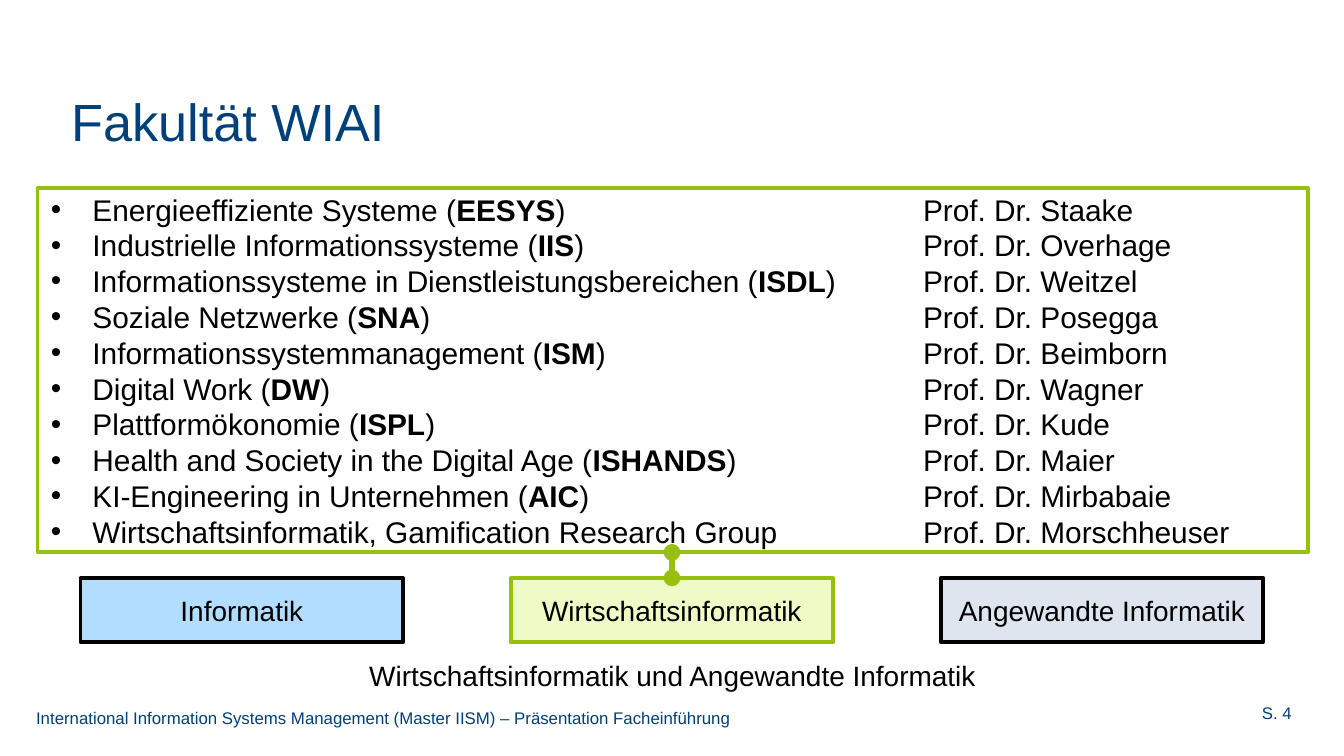
from pptx import Presentation
from pptx.dml.color import RGBColor
from pptx.enum.shapes import MSO_CONNECTOR, MSO_SHAPE
from pptx.enum.text import MSO_ANCHOR, PP_ALIGN
from pptx.oxml.ns import qn
from pptx.util import Inches, Pt
from lxml.etree import SubElement

NAVY, GREEN, BLACK = "00407A", "97BF0D", "000000"
MARGIN, WIDTH = 0.28, 9.45              # content column
BOX_W, BOX_H, BOX_TOP, PITCH = 2.4, 0.48, 4.3, 3.2
LIST_TOP, LIST_H = 1.4, 2.71
INDENT, NAME_TAB = 0.31, 6.49


def rgb(value):
    return RGBColor.from_string(value)


def write(sp, text, size, color, align, anchor):
    tf = sp.text_frame
    for key, value in {"word_wrap": True, "vertical_anchor": anchor}.items():
        setattr(tf, key, value)
    p = tf.paragraphs[0]
    p.alignment = align
    r = p.add_run()
    r.text = text
    for key, value in {"name": "Arial", "size": Pt(size)}.items():
        setattr(r.font, key, value)
    r.font.color.rgb = rgb(color)


prs = Presentation()
prs.slide_width = Inches(10)
prs.slide_height = prs.slide_width * 9 // 16
s = prs.slides.add_slide(prs.slide_layouts[5])

# Title
title = s.shapes.title
for key, value in {"left": 0.43, "top": 0.29, "width": 8.03, "height": 1.21}.items():
    setattr(title, key, Inches(value))
write(title, "Fakultät WIAI", 28, NAVY, PP_ALIGN.LEFT, MSO_ANCHOR.MIDDLE)

# Footer, page number and caption
for text, area, size, color, align, anchor in [
    ("International Information Systems Management (Master IISM) – Präsentation Facheinführung",
     (0.17, 5.22, 7.35, 0.19), 9, NAVY, PP_ALIGN.LEFT, MSO_ANCHOR.TOP),
    ("S. 4", (8.54, 5.18, 1.17, 0.25), 9, NAVY, PP_ALIGN.RIGHT, MSO_ANCHOR.TOP),
    ("Wirtschaftsinformatik und Angewandte Informatik",
     (MARGIN, 4.83, WIDTH, 0.37), 15, BLACK, PP_ALIGN.CENTER, MSO_ANCHOR.BOTTOM),
]:
    sp = s.shapes.add_textbox(*map(Inches, area))
    write(sp, text, size, color, align, anchor)

# Three subject groups
for i, (text, fill, line) in enumerate([
    ("Informatik", "B2DDFF", BLACK),
    ("Wirtschaftsinformatik", "EFFBC6", GREEN),
    ("Angewandte Informatik", "DFE5EE", BLACK),
]):
    sp = s.shapes.add_shape(MSO_SHAPE.RECTANGLE, Inches(0.6 + i * PITCH), Inches(BOX_TOP),
                            Inches(BOX_W), Inches(BOX_H))
    sp.shadow.inherit = False
    sp.fill.solid()
    sp.fill.fore_color.rgb = rgb(fill)
    sp.line.color.rgb = rgb(line)
    sp.line.width = Pt(2)
    write(sp, text, 15, BLACK, PP_ALIGN.CENTER, MSO_ANCHOR.MIDDLE)

# Frame with the chairs
frame = s.shapes.add_shape(MSO_SHAPE.RECTANGLE, Inches(MARGIN), Inches(LIST_TOP),
                           Inches(WIDTH), Inches(LIST_H))
frame.shadow.inherit = False
frame.fill.background()
frame.line.color.rgb = rgb(GREEN)
frame.line.width = Pt(2)
tf = frame.text_frame
tf.word_wrap = True
tf.vertical_anchor = MSO_ANCHOR.MIDDLE

chairs = [
    ("Energieeffiziente Systeme", "EESYS", "Staake"),
    ("Industrielle Informationssysteme", "IIS", "Overhage"),
    ("Informationssysteme in Dienstleistungsbereichen", "ISDL", "Weitzel"),
    ("Soziale Netzwerke", "SNA", "Posegga"),
    ("Informationssystemmanagement", "ISM", "Beimborn"),
    ("Digital Work", "DW", "Wagner"),
    ("Plattformökonomie", "ISPL", "Kude"),
    ("Health and Society in the Digital Age", "ISHANDS", "Maier"),
    ("KI-Engineering in Unternehmen", "AIC", "Mirbabaie"),
    ("Wirtschaftsinformatik, Gamification Research Group", "", "Morschheuser"),
]
for i, (chair, short, name) in enumerate(chairs):
    p = tf.paragraphs[0] if i == 0 else tf.add_paragraph()
    p.alignment = PP_ALIGN.LEFT
    pPr = p._p.get_or_add_pPr()
    pPr.set("marL", str(Inches(INDENT)))
    pPr.set("indent", str(-Inches(INDENT)))
    SubElement(pPr, qn("a:buFont"), typeface="Arial")
    SubElement(pPr, qn("a:buChar"), char="•")
    tabs = SubElement(pPr, qn("a:tabLst"))
    SubElement(tabs, qn("a:tab"), pos=str(Inches(NAME_TAB)), algn="l")
    prof = f"\tProf. Dr. {name}"
    parts = [(f"{chair} (", False), (short, True), (f"){prof}", False)]
    for text, bold in parts if short else [(chair + prof, False)]:
        r = p.add_run()
        r.text = text
        for key, value in {"name": "Arial", "size": Pt(16), "bold": bold}.items():
            setattr(r.font, key, value)
        r.font.color.rgb = rgb(BLACK)

# Link from the middle group to the frame
middle = prs.slide_width // 2
link = s.shapes.add_connector(MSO_CONNECTOR.STRAIGHT, middle, Inches(BOX_TOP),
                              middle, Inches(LIST_TOP + LIST_H))
link.line.color.rgb = rgb(GREEN)
link.line.width = Pt(3)
ln = link.line._get_or_add_ln()
for end in ("a:headEnd", "a:tailEnd"):
    SubElement(ln, qn(end), type="oval")
SubElement(link._element.spPr, qn("a:effectLst"))

prs.save("out.pptx")
